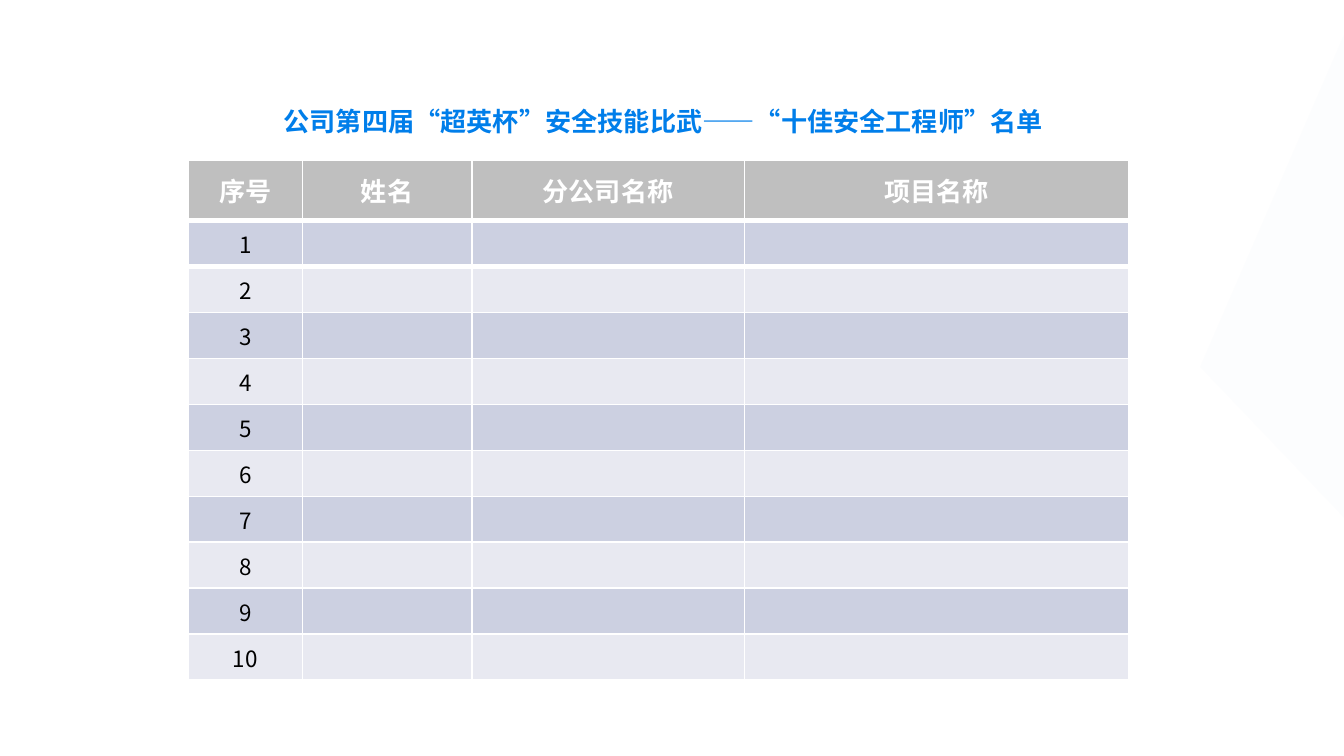
from lxml import etree
from pptx import Presentation
from pptx import util as u
from pptx.dml.color import RGBColor
from pptx.enum import text
from pptx.oxml.ns import qn

FONT = "Noto Sans CJK SC"
HEADLINE = "公司第四届“超英杯”安全技能比武——“十佳安全工程师”名单"
HEADERS = ["序号", "姓名", "分公司名称", "项目名称"]
RANKS = [str(rank) for rank in range(1, 11)]
COLUMN_WIDTHS = [0.85, 1.26, 2.03, 2.86]
ROW_HEIGHTS = [0.45] + [0.32] * len(RANKS)
BANDS = ["CCD0E1", "E8E9F1"]
FACET = [(10, 0.26), (10, 3.85), (8.93, 2.73)]

HEADLINE_STYLE = {"size": u.Pt(14), "bold": True, "color": "007EEA"}
HEADER_STYLE = {"size": u.Pt(14), "bold": True, "color": "FFFFFF"}
RANK_STYLE = {"size": u.Pt(12), "bold": False, "color": "000000"}


def paint(fill, color):
    fill.solid()
    fill.fore_color.rgb = RGBColor.from_string(color)


def write(frame, words, style, align):
    paragraph = frame.paragraphs[0]
    paragraph.alignment = align
    run = paragraph.add_run()
    run.text = words
    for key, value in {"name": FONT, **style}.items():
        if key == "color":
            paint(run.font.fill, value)
        else:
            setattr(run.font, key, value)
    latin = run.font._element.find(qn("a:latin"))
    latin.addnext(etree.Element(qn("a:ea"), typeface=FONT))


def rule(cell, side, points):
    line = etree.Element(qn(f"a:{side}"), w=str(u.Pt(points)))
    fill = etree.SubElement(line, qn("a:solidFill"))
    etree.SubElement(fill, qn("a:srgbClr"), val="FFFFFF")
    cell._tc.get_or_add_tcPr().insert(0, line)


def add_facet(slide):
    points = [(u.Inches(x), u.Inches(y)) for x, y in FACET]
    builder = slide.shapes.build_freeform(*points[0])
    builder.add_line_segments(points[1:], close=True)
    facet = builder.convert_to_shape()
    facet.shadow.inherit = False
    facet.line.fill.background()
    paint(facet.fill, "EAEFF6")
    tint = facet._element.spPr.find(qn("a:solidFill"))[0]
    etree.SubElement(tint, qn("a:alpha"), val="10000")


def add_headline(slide):
    headline = slide.shapes.title
    place = {"left": 2.01, "top": 0.73, "width": 6.02, "height": 0.34}
    for side, inches in place.items():
        setattr(headline, side, u.Inches(inches))
    frame = headline.text_frame
    layout = {"word_wrap": True, "auto_size": text.MSO_AUTO_SIZE.NONE,
              "vertical_anchor": text.MSO_ANCHOR.MIDDLE}
    for key, value in layout.items():
        setattr(frame, key, value)
    write(frame, HEADLINE, HEADLINE_STYLE, text.PP_ALIGN.LEFT)


def add_roster(slide):
    rows = [HEADERS] + [[rank, "", "", ""] for rank in RANKS]
    area = [u.Inches(v) for v in (1.4, 1.19, sum(COLUMN_WIDTHS), sum(ROW_HEIGHTS))]
    roster = slide.shapes.add_table(len(rows), len(HEADERS), *area).table
    for column, width in zip(roster.columns, COLUMN_WIDTHS):
        column.width = u.Inches(width)
    for row, height in zip(roster.rows, ROW_HEIGHTS):
        row.height = u.Inches(height)
    for r, row in enumerate(rows):
        for c, words in enumerate(row):
            cell = roster.cell(r, c)
            cell.vertical_anchor = text.MSO_ANCHOR.MIDDLE
            paint(cell.fill, BANDS[(r - 1) % 2] if r else "BFBFBF")
            if r < 2:
                rule(cell, "lnT" if r else "lnB", 3)
            if words:
                style = RANK_STYLE if r else HEADER_STYLE
                write(cell.text_frame, words, style, text.PP_ALIGN.CENTER)
            else:
                blank = cell.text_frame.paragraphs[0]._p
                etree.SubElement(blank, qn("a:endParaRPr"), sz="1200")


def main():
    """Build the award roster slide."""
    deck = Presentation()
    deck.slide_width = u.Inches(10)
    deck.slide_height = deck.slide_width * 9 // 16
    slide = deck.slides.add_slide(deck.slide_layouts[5])
    paint(slide.background.fill, "FFFFFF")
    add_facet(slide)
    add_roster(slide)
    add_headline(slide)
    deck.save("out.pptx")


if __name__ == "__main__":
    main()
